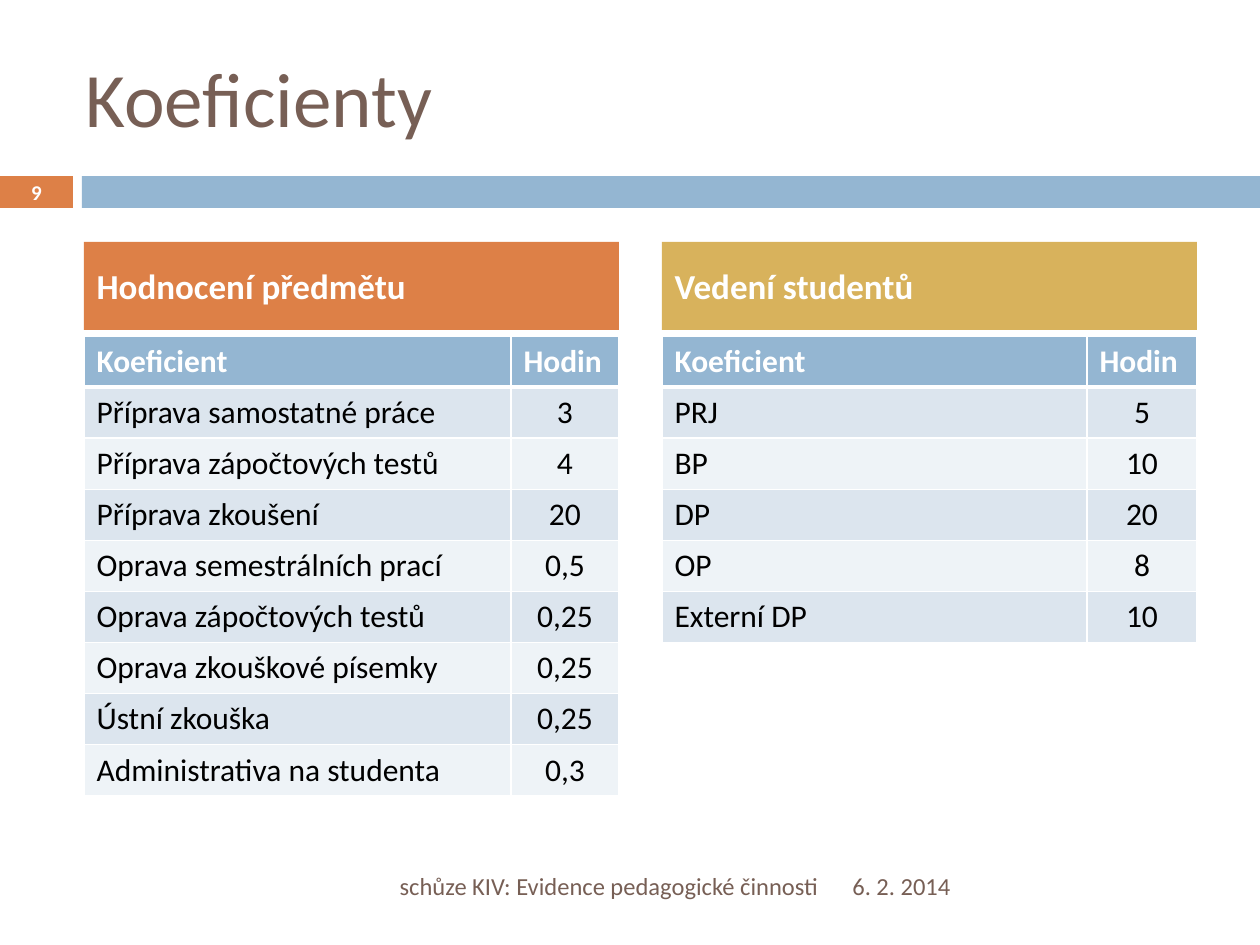
from dataclasses import dataclass

from lxml.etree import SubElement
from pptx import Presentation
from pptx.dml.color import RGBColor
from pptx.enum.shapes import MSO_SHAPE
from pptx.enum.text import MSO_ANCHOR, PP_ALIGN
from pptx.oxml.ns import qn
from pptx.util import Pt

# Content
TITLE = "Koeficienty"
PAGE_NUMBER = "9"
FOOTER = "schůze KIV: Evidence pedagogické činnosti"
DATE = "6. 2. 2014"
HEADER = ("Koeficient", "Hodin")
SUBJECT_ROWS = [
    ("Příprava samostatné práce", "3"),
    ("Příprava zápočtových testů", "4"),
    ("Příprava zkoušení", "20"),
    ("Oprava semestrálních prací", "0,5"),
    ("Oprava zápočtových testů", "0,25"),
    ("Oprava zkouškové písemky", "0,25"),
    ("Ústní zkouška", "0,25"),
    ("Administrativa na studenta", "0,3"),
]
STUDENT_ROWS = [
    ("PRJ", "5"),
    ("BP", "10"),
    ("DP", "20"),
    ("OP", "8"),
    ("Externí DP", "10"),
]


@dataclass(frozen=True)
class Theme:
    font: str = "Calibri"
    brown: str = "775F55"
    orange: str = "DD8047"
    blue: str = "94B6D2"
    gold: str = "D8B25C"
    white: str = "FFFFFF"
    black: str = "000000"
    bands: tuple = ("DCE5EE", "EEF3F7")
    title_size: float = 44
    heading_size: float = 20
    table_size: float = 18
    footer_size: float = 14
    number_size: float = 12


THEME = Theme()

# Each section: heading, heading colour, table rows, column widths in px
SECTIONS = [
    ("Hodnocení předmětu", THEME.orange, SUBJECT_ROWS, (427, 108)),
    ("Vedení studentů", THEME.gold, STUDENT_ROWS, (425, 110)),
]

# Layout in px
PX = 914400 / 126
LEFT, SECTION_WIDTH, GAP = 84, 535, 43
HEADING_TOP, HEADING_HEIGHT = 242, 88
TABLE_TOP, ROW_HEIGHT = 336, 51
BAR_TOP, BAR_HEIGHT = 176, 32
FOOTER_TOP, FOOTER_HEIGHT = 861, 50


def emu(*lengths):
    return [round(length * PX) for length in lengths]


def place(shape, *box):
    shape.left, shape.top, shape.width, shape.height = emu(*box)


def paint(target, color):
    target.fill.solid()
    target.fill.fore_color.rgb = RGBColor.from_string(color)


def write(frame, text, size, color, bold=False, align=PP_ALIGN.LEFT):
    frame.text = text
    frame.word_wrap = True
    frame.vertical_anchor = MSO_ANCHOR.MIDDLE
    para = frame.paragraphs[0]
    para.alignment = align
    para.font.name = THEME.font
    para.font.size = Pt(size)
    para.font.bold = bold
    para.font.color.rgb = RGBColor.from_string(color)
    return para


def add_bar(page, left, width, color):
    bar = page.shapes.add_shape(
        MSO_SHAPE.RECTANGLE, *emu(left, BAR_TOP, width, BAR_HEIGHT))
    bar.shadow.inherit = False
    paint(bar, color)
    bar.line.fill.background()


def add_label(page, box, text, size, color, **style):
    label = page.shapes.add_textbox(*emu(*box))
    write(label.text_frame, text, size, color, **style)


def set_borders(cell, row):
    # A thick rule parts the header from the rows below it
    widths = {"lnL": 1, "lnR": 1, "lnT": 3 if row == 1 else 1,
              "lnB": 3 if row == 0 else 1}
    properties = cell._tc.get_or_add_tcPr()
    for side, width in widths.items():
        line = SubElement(properties, qn(f"a:{side}"), w=str(Pt(width)))
        fill = SubElement(line, qn("a:solidFill"))
        SubElement(fill, qn("a:srgbClr"), val=THEME.white)


def add_table(page, left, rows, column_widths):
    rows = [HEADER, *rows]
    box = emu(left, TABLE_TOP, sum(column_widths), ROW_HEIGHT * len(rows))
    table = page.shapes.add_table(len(rows), len(HEADER), *box).table
    for column, width in zip(table.columns, emu(*column_widths)):
        column.width = width
    for r, values in enumerate(rows):
        table.rows[r].height = emu(ROW_HEIGHT)[0]
        is_header = r == 0
        for c, value in enumerate(values):
            cell = table.cell(r, c)
            centered = c == 1 and not is_header
            write(cell.text_frame, value, THEME.table_size,
                  THEME.white if is_header else THEME.black, bold=is_header,
                  align=PP_ALIGN.CENTER if centered else PP_ALIGN.LEFT)
            cell.vertical_anchor = MSO_ANCHOR.TOP
            set_borders(cell, r)
            paint(cell, THEME.blue if is_header else THEME.bands[(r - 1) % 2])


def main():
    deck = Presentation()
    deck.slide_width, deck.slide_height = emu(1260, 945)
    page = deck.slides.add_slide(deck.slide_layouts.get_by_name("Comparison"))
    title, left_heading, left_body, right_heading, right_body = page.placeholders
    for unused in (left_body, right_body):
        unused.element.getparent().remove(unused.element)

    # Title and bars
    place(title, 73, 38, 1124, 118)
    write(title.text_frame, TITLE, THEME.title_size, THEME.brown)
    add_bar(page, 0, 73, THEME.orange)
    add_bar(page, 82, 1178, THEME.blue)

    # Headings with their tables
    headings = (left_heading, right_heading)
    for i, (heading, section) in enumerate(zip(headings, SECTIONS)):
        text, color, rows, column_widths = section
        left = LEFT + i * (SECTION_WIDTH + GAP)
        place(heading, left, HEADING_TOP, SECTION_WIDTH, HEADING_HEIGHT)
        paint(heading, color)
        para = write(heading.text_frame, text, THEME.heading_size,
                     THEME.white, bold=True)
        para.space_before = Pt(7)
        add_table(page, left, rows, column_widths)

    # Page number, footer and date
    add_label(page, (0, BAR_TOP, 73, BAR_HEIGHT), PAGE_NUMBER,
              THEME.number_size, THEME.white, bold=True, align=PP_ALIGN.CENTER)
    add_label(page, (LEFT, FOOTER_TOP, 747, FOOTER_HEIGHT), FOOTER,
              THEME.footer_size, THEME.brown, align=PP_ALIGN.RIGHT)
    add_label(page, (840, FOOTER_TOP, 368, FOOTER_HEIGHT), DATE,
              THEME.footer_size, THEME.brown)

    deck.save("out.pptx")


if __name__ == "__main__":
    main()
